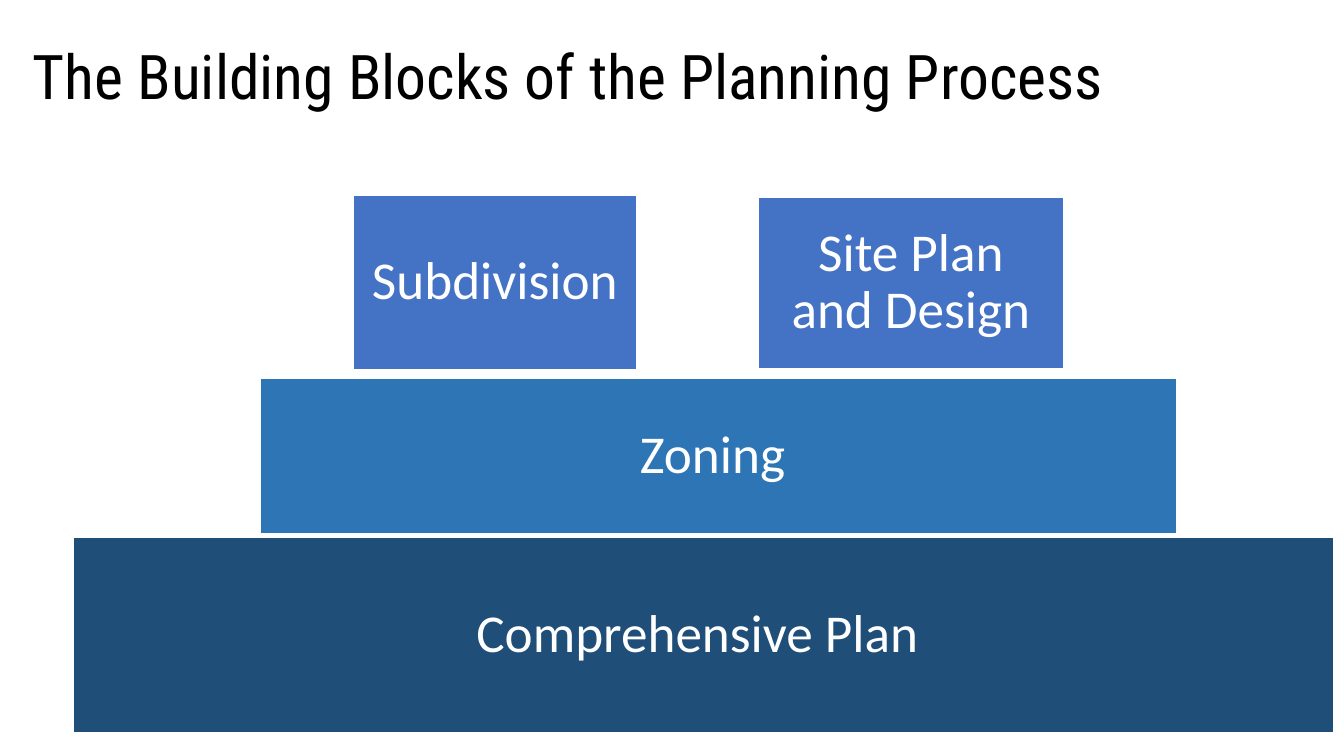
from dataclasses import dataclass

import pptx
import pptx.dml.color
import pptx.enum.shapes
import pptx.enum.text
import pptx.util

EMU_PER_PX = 914400 / 100.8
SLIDE_WIDTH, SLIDE_HEIGHT = 1344, 756
BLOCK_INSET = 16

COLORS = {
    "white": "FFFFFF",
    "black": "000000",
    "application": "4472C4",
    "zoning": "2E75B6",
    "foundation": "1F4E79",
}


@dataclass(frozen=True)
class Block:
    text: str
    left: int
    top: int
    width: int
    height: int
    color: str
    extra_right_inset: int = 0


BLOCKS = [
    Block("Zoning", 260, 378, 917, 156, "zoning", 12),
    Block("Subdivision", 353, 195, 284, 175, "application"),
    Block("Comprehensive Plan", 73, 537, 1261, 196, "foundation", 12),
    Block("Site Plan and Design", 758, 197, 306, 172, "application"),
]


def px(length: int) -> pptx.util.Emu:
    return pptx.util.Emu(round(length * EMU_PER_PX))


def rgb(name: str) -> pptx.dml.color.RGBColor:
    return pptx.dml.color.RGBColor.from_string(COLORS[name])


def set_font(paragraph, name: str, size: int, color: str) -> None:
    paragraph.font.name = name
    paragraph.font.size = pptx.util.Pt(size)
    paragraph.font.color.rgb = rgb(color)


def add_block(slide, block: Block) -> None:
    shape = slide.shapes.add_shape(
        pptx.enum.shapes.MSO_SHAPE.RECTANGLE,
        px(block.left), px(block.top), px(block.width), px(block.height),
    )
    shape.shadow.inherit = False
    shape.fill.solid()
    shape.fill.fore_color.rgb = rgb(block.color)
    shape.line.color.rgb = rgb("white")
    shape.line.width = pptx.util.Pt(1)

    frame = shape.text_frame
    frame.word_wrap = True
    frame.vertical_anchor = pptx.enum.text.MSO_ANCHOR.MIDDLE
    frame.margin_left = frame.margin_top = frame.margin_bottom = px(BLOCK_INSET)
    frame.margin_right = px(BLOCK_INSET + block.extra_right_inset)
    paragraph = frame.paragraphs[0]
    paragraph.text = block.text
    paragraph.alignment = pptx.enum.text.PP_ALIGN.CENTER
    paragraph.line_spacing = 0.9
    set_font(paragraph, "Calibri", 38, "white")


def add_title(slide, text: str) -> None:
    title = slide.shapes.add_textbox(px(23), px(33), px(1258), px(85))
    title.text_frame.word_wrap = True
    paragraph = title.text_frame.paragraphs[0]
    paragraph.text = text
    set_font(paragraph, "Roboto Condensed", 44, "black")


def main() -> None:
    presentation = pptx.Presentation()
    presentation.slide_width = px(SLIDE_WIDTH)
    presentation.slide_height = px(SLIDE_HEIGHT)
    slide = presentation.slides.add_slide(presentation.slide_layouts[6])
    for block in BLOCKS:
        add_block(slide, block)
    add_title(slide, "The Building Blocks of the Planning Process")
    presentation.save("out.pptx")


if __name__ == "__main__":
    main()
